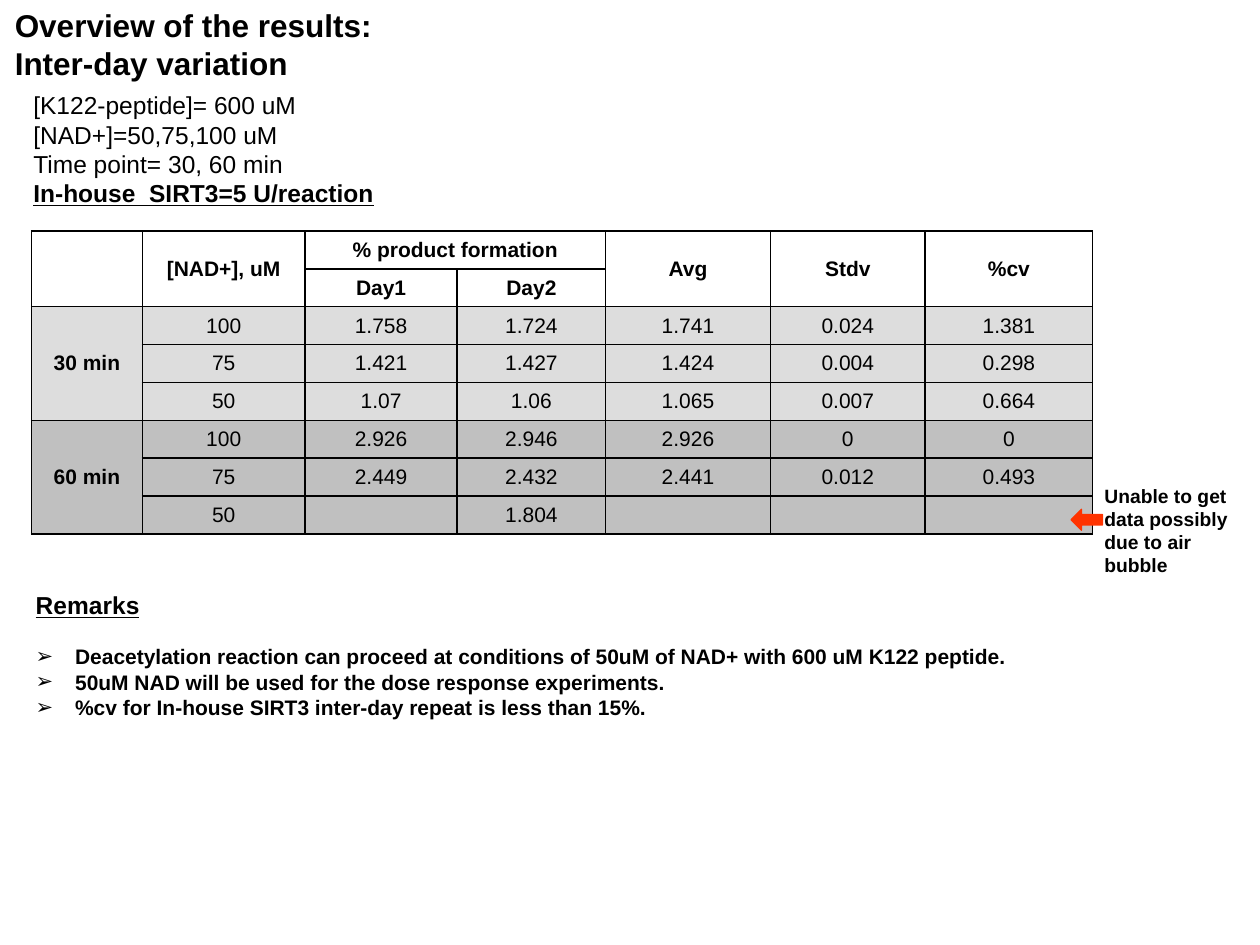
"""Build the inter-day variation results slide."""
import pptx
import pptx.dml.color
import pptx.enum.shapes
import pptx.enum.text
import pptx.oxml.ns
import pptx.util
from lxml import etree

Pt = pptx.util.Pt
qn = pptx.oxml.ns.qn
ALIGN = pptx.enum.text.PP_ALIGN
ANCHOR = pptx.enum.text.MSO_ANCHOR

COLORS = {"ink": "000000", "early": "DDDDDD", "late": "C0C0C0", "arrow": "FF3300"}
FONT = "Arial"

TITLE = ["Overview of the results:", "Inter-day variation"]
CONDITIONS = ["[K122-peptide]= 600 uM", "[NAD+]=50,75,100 uM", "Time point= 30, 60 min"]
ENZYME = "In-house  SIRT3=5 U/reaction"
NOTE = "Unable to get data possibly due to air bubble"
REMARKS = [
    "Deacetylation reaction can proceed at conditions of 50uM of NAD+ with 600 uM K122 peptide.",
    "50uM NAD will be used for the dose response experiments.",
    "%cv for In-house SIRT3 inter-day repeat is less than 15%.",
]
TABLE = [
    ["", "[NAD+], uM", "% product formation", "", "Avg", "Stdv", "%cv"],
    ["", "", "Day1", "Day2", "", "", ""],
    ["30 min", "100", "1.758", "1.724", "1.741", "0.024", "1.381"],
    ["", "75", "1.421", "1.427", "1.424", "0.004", "0.298"],
    ["", "50", "1.07", "1.06", "1.065", "0.007", "0.664"],
    ["60 min", "100", "2.926", "2.946", "2.926", "0", "0"],
    ["", "75", "2.449", "2.432", "2.441", "0.012", "0.493"],
    ["", "50", "", "1.804", "", "", ""],
]
MERGES = [(0, column, 1, column) for column in (0, 1, 4, 5, 6)]
MERGES += [(0, 2, 0, 3), (2, 0, 4, 0), (5, 0, 7, 0)]
ROW_FILLS = [None] * 2 + ["early"] * 3 + ["late"] * 3
COLUMN_WIDTHS = [63.4, 92.9, 87, 84.8, 94.2, 88.4, 95.8]
ROW_HEIGHT = 19.75


def color(name):
    return pptx.dml.color.RGBColor.from_string(COLORS[name])


def add_text(frame, text, size=12, bold=False, underline=False, align=ALIGN.LEFT, before=0, bullet=None):
    """Write one formatted paragraph, filling the empty first one before adding more."""
    paragraph = frame.paragraphs[0]
    if paragraph.runs:
        paragraph = frame.add_paragraph()
    paragraph.alignment = align
    paragraph.space_before = Pt(before)
    properties = paragraph._p.get_or_add_pPr()
    indent = Pt(22.5) if bullet else 0
    properties.set("marL", str(indent))
    properties.set("indent", str(-indent))
    if bullet:
        etree.SubElement(properties, qn("a:buFont"), typeface=FONT)
        etree.SubElement(properties, qn("a:buChar"), char=bullet)
    else:
        etree.SubElement(properties, qn("a:buNone"))
    if not text:
        etree.SubElement(paragraph._p, qn("a:endParaRPr"), sz=str(size * 100))
        return
    run = paragraph.add_run()
    run.text = text
    run.font.name = FONT
    run.font.size = Pt(size)
    run.font.bold = bold
    run.font.underline = underline
    run.font.color.rgb = color("ink")


def place(shape, left, top, width, height, wrap=True):
    shape.left, shape.top, shape.width, shape.height = map(Pt, (left, top, width, height))
    frame = shape.text_frame
    frame.word_wrap = wrap
    frame.auto_size = pptx.enum.text.MSO_AUTO_SIZE.SHAPE_TO_FIT_TEXT
    frame.vertical_anchor = ANCHOR.TOP
    return frame


def add_box(slide, *bounds):
    return place(slide.shapes.add_textbox(0, 0, 0, 0), *bounds)


def add_borders(cell):
    properties = cell._tc.get_or_add_tcPr()
    for side in ("a:lnL", "a:lnR", "a:lnT", "a:lnB"):
        line = etree.SubElement(properties, qn(side), w=str(Pt(1)))
        fill = etree.SubElement(line, qn("a:solidFill"))
        etree.SubElement(fill, qn("a:srgbClr"), val=COLORS["ink"])


def add_results(slide):
    frame = slide.shapes.add_table(
        len(TABLE), len(COLUMN_WIDTHS), Pt(18), Pt(132),
        Pt(sum(COLUMN_WIDTHS)), Pt(ROW_HEIGHT * len(TABLE)))
    table = frame.table
    table.first_row = table.horz_banding = False
    for column, width in zip(table.columns, COLUMN_WIDTHS):
        column.width = Pt(width)
    for row_index, values in enumerate(TABLE):
        table.rows[row_index].height = Pt(ROW_HEIGHT)
        fill_name = ROW_FILLS[row_index]
        for column_index, value in enumerate(values):
            cell = table.cell(row_index, column_index)
            cell.vertical_anchor = ANCHOR.MIDDLE
            bold = fill_name is None or column_index == 0
            add_text(cell.text_frame, value, bold=bold, align=ALIGN.CENTER)
            add_borders(cell)
            if fill_name:
                cell.fill.solid()
                cell.fill.fore_color.rgb = color(fill_name)
            else:
                cell.fill.background()
    for top, left, bottom, right in MERGES:
        table.cell(top, left).merge(table.cell(bottom, right))


def main():
    presentation = pptx.Presentation()
    presentation.slide_width, presentation.slide_height = Pt(720), Pt(540)
    slide = presentation.slides.add_slide(presentation.slide_layouts[1])

    title = place(slide.shapes.title, 1.25, 0, 220.5, 51, wrap=False)
    for line in TITLE:
        add_text(title, line, size=18, bold=True)

    add_results(slide)

    conditions = add_box(slide, 12, 48, 360, 75)
    for line in CONDITIONS:
        add_text(conditions, line, size=14)
    add_text(conditions, ENZYME, size=14, bold=True, underline=True)

    arrow = slide.shapes.add_shape(
        pptx.enum.shapes.MSO_SHAPE.LEFT_ARROW, Pt(612), Pt(291), Pt(18), Pt(12))
    arrow.shadow.inherit = False
    arrow.fill.solid()
    arrow.fill.fore_color.rgb = color("arrow")
    arrow.line.color.rgb = color("arrow")
    arrow.line.width = Pt(0.75)

    note = add_box(slide, 624, 273, 90, 60.5)
    add_text(note, NOTE, size=11, bold=True)

    remarks = place(slide.placeholders[1], 13.2, 333.5, 676.8, 82)
    add_text(remarks, "Remarks", size=14, bold=True, underline=True)
    for index, line in enumerate(REMARKS):
        add_text(remarks, line, bold=True, before=0 if index else 14, bullet="➢")

    presentation.save("out.pptx")


if __name__ == "__main__":
    main()
